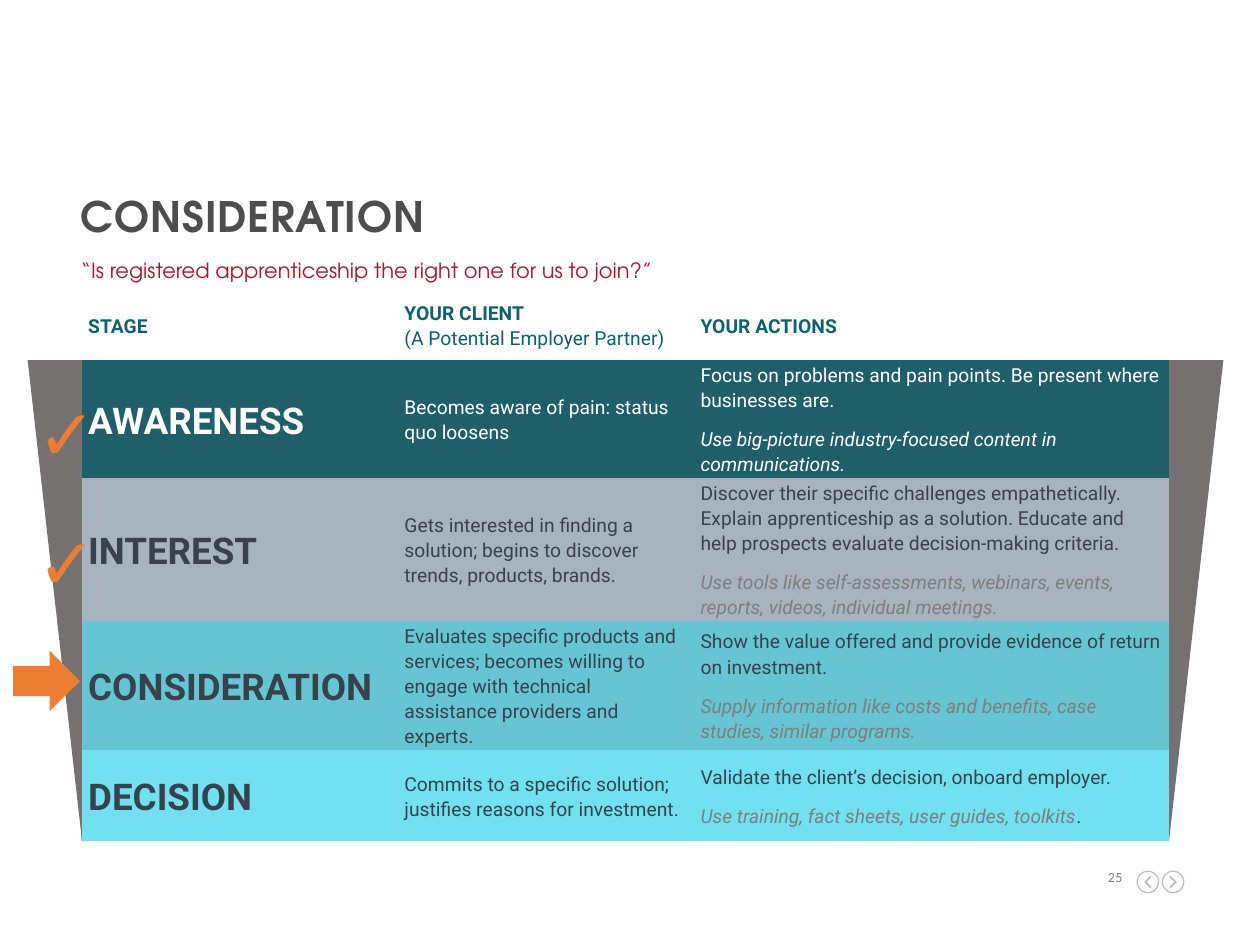
from pptx import Presentation
from pptx.dml.color import RGBColor
from pptx.enum.shapes import MSO_SHAPE
from pptx.enum.text import MSO_ANCHOR, PP_ALIGN
from pptx.oxml import parse_xml
from pptx.oxml.ns import nsdecls, qn
from pptx.util import Inches, Pt

TRIANGLE = MSO_SHAPE.RIGHT_TRIANGLE
ARROW = MSO_SHAPE.DOWN_ARROW
MIDDLE = MSO_ANCHOR.MIDDLE
RIGHT = PP_ALIGN.RIGHT
QUARTER = 5400000

COLORS = {
    "white": "FFFFFF", "title": "4D4D4D", "red": "AA182C", "header": "0B6370",
    "dark": "38424C", "hint": "7F7F7F", "number": "808080", "icon": "BFBFBF",
    "funnel": "767171", "orange": "ED7D31", "awareness": "1E5F69",
    "interest": "A7B3BE", "consideration": "65C5D3", "decision": "71E0F1",
}
TITLE = {"name": "TeX Gyre Adventor", "size": Pt(24), "bold": True}
SUBTITLE = {"name": "TeX Gyre Adventor", "size": Pt(12), "bold": False}
NUMBER = {"name": "Calibri", "size": Pt(8)}
CHECK = {"name": "Calibri", "size": Pt(40.5), "bold": True}
BODY = {"name": "Roboto", "size": Pt(11), "bold": False, "italic": False}
HEAD = {**BODY, "bold": True}
HINT = {**BODY, "italic": True}
STAGE = {**HEAD, "size": Pt(21)}

CELL = {"vertical_anchor": MIDDLE, "margin_left": Inches(0.06),
        "margin_right": Inches(0.06), "margin_top": 0, "margin_bottom": 0}
CELL_PARA = {"line_spacing": 1.12, "space_before": Pt(4), "space_after": Pt(4)}
NO_MARGINS = {"margin_left": 0, "margin_right": 0, "margin_top": 0, "margin_bottom": 0}

COLUMNS = [2.51, 2.35, 3.78]
HEADER_HEIGHT = 0.56
HEADERS = [("STAGE", ""), ("YOUR CLIENT", "(A Potential Employer Partner)"),
           ("YOUR ACTIONS", "")]
STAGES = [
    ("AWARENESS", 0.85, "white", "white",
     "Becomes aware of pain: status quo loosens",
     "Focus on problems and pain points. Be present where businesses are.",
     "Use big-picture industry-focused content in communications.", ""),
    ("INTEREST", 1.05, "dark", "hint",
     "Gets interested in finding a solution; begins to discover trends, products, brands.",
     "Discover their specific challenges empathetically. Explain apprenticeship as a "
     "solution. Educate and help prospects evaluate decision-making criteria.",
     "Use tools like self-assessments, webinars, events, reports, videos, "
     "individual meetings.", ""),
    ("CONSIDERATION", 0.85, "dark", "hint",
     "Evaluates specific products and services; becomes willing to engage with "
     "technical assistance providers and experts.",
     "Show the value offered and provide evidence of return on investment.",
     "Supply information like costs and benefits, case studies, similar programs.", ""),
    ("DECISION", 0.72, "dark", "hint",
     "Commits to a specific solution; justifies reasons for investment.",
     "Validate the client’s decision, onboard employer.",
     "Use training, fact sheets, user guides, toolkits", "."),
]


def rgb(name):
    """Return the named colour."""
    return RGBColor.from_string(COLORS[name])


def apply(obj, values):
    """Set each attribute of an object from a dict."""
    for key, value in values.items():
        setattr(obj, key, value)


def add_run(p, text, style, color, spacing=0):
    """Add a styled run to a paragraph."""
    r = p.add_run()
    r.text = text
    apply(r.font, style)
    r.font.color.rgb = rgb(color)
    if spacing:
        r.font._element.set("spc", str(spacing))


def paint(sp, color):
    """Give a shape a plain fill without line or shadow."""
    sp.shadow.inherit = False
    sp.fill.solid()
    sp.fill.fore_color.rgb = rgb(color)
    sp.line.fill.background()


def add_label(slide, box, text, style, color, frame=NO_MARGINS, para=None, spacing=0):
    """Place one line of text in a box."""
    tf = slide.shapes.add_textbox(*map(Inches, box)).text_frame
    apply(tf, {"word_wrap": True, **frame})
    p = tf.paragraphs[0]
    apply(p, para or {})
    add_run(p, text, style, color, spacing)


def fill_cell(cell, fill, paragraphs):
    """Fill a borderless table cell with paragraphs made of runs."""
    apply(cell, CELL)
    cell.fill.solid()
    cell.fill.fore_color.rgb = rgb(fill)
    for i, side in enumerate(("lnL", "lnR", "lnT", "lnB")):
        border = f'<a:{side} {nsdecls("a")} w="0"><a:noFill/></a:{side}>'
        cell._tc.tcPr.insert(i, parse_xml(border))
    tf = cell.text_frame
    for i, runs in enumerate(paragraphs):
        p = tf.add_paragraph() if i else tf.paragraphs[0]
        apply(p, CELL_PARA)
        if not i:
            p.space_before = Pt(0)
        for j, run in enumerate(runs):
            if j and fill == "white":
                p.add_line_break()
            add_run(p, *run)


def add_heading(slide, left, top, width):
    """Place the title and the question below it."""
    add_label(slide, (left, top, width, 0.56), "CONSIDERATION", TITLE, "title", spacing=50)
    add_label(slide, (left, top + 0.57, width, 0.21),
              "“Is registered apprenticeship the right one for us to join?”",
              SUBTITLE, "red", para={"line_spacing": Pt(12)})


def add_stage_table(slide, left, top):
    """Place the table of stages, client states and actions."""
    heights = [HEADER_HEIGHT] + [stage[1] for stage in STAGES]
    box = (left, top, sum(COLUMNS), sum(heights))
    table = slide.shapes.add_table(len(heights), len(COLUMNS), *map(Inches, box)).table
    apply(table, {"first_row": False, "horz_banding": False})
    for column, width in zip(table.columns, COLUMNS):
        column.width = Inches(width)
    for row, height in zip(table.rows, heights):
        row.height = Inches(height)
    for c, (head, note) in enumerate(HEADERS):
        runs = [(head, HEAD, "header")] + ([(note, BODY, "header")] if note else [])
        fill_cell(table.cell(0, c), "white", [runs])
    for i, (name, _, color, hint_color, client, action, hint, end) in enumerate(STAGES, 1):
        hints = [(hint, HINT, hint_color)] + ([(end, BODY, color)] if end else [])
        contents = [[[(name, STAGE, color)]], [[(client, BODY, color)]],
                    [[(action, BODY, color)], hints]]
        for c, paragraphs in enumerate(contents):
            fill_cell(table.cell(i, c), name.lower(), paragraphs)


def add_funnel(slide, left, top, width, height):
    """Place the two tapering sides of the funnel around a box."""
    side = 0.43
    for x, flips in ((left - side, ("flipH", "flipV")), (left + width, ("flipV",))):
        sp = slide.shapes.add_shape(TRIANGLE, *map(Inches, (x, top, side, height)))
        paint(sp, "funnel")
        for flip in flips:
            sp._element.spPr.xfrm.set(flip, "1")


def add_progress(slide, left, top):
    """Place the checks for finished stages and the arrow at the current one."""
    for i in range(2):
        add_label(slide, (left, top + 1.03 * i, 0.84, 0.78), "✓", CHECK, "orange", frame={})
    box = (left - 0.07, top + 2.1, 0.48, 0.53)
    sp = slide.shapes.add_shape(ARROW, *map(Inches, box))
    sp.rotation = 270
    paint(sp, "orange")


def add_nav_icon(slide, left, top, size, direction):
    """Place a ringed chevron that points left (-1) or right (1)."""
    radii = [size / 2, size / 2 - 0.01]
    chevron = [(-0.03, -0.04), (0.01, 0), (-0.03, 0.04),
               (-0.02, 0.05), (0.03, 0), (-0.02, -0.05)]
    contours = [[(r, 0), (0, r), (-r, 0), (0, -r), (r, 0)] for r in radii]
    contours.append([(direction * x, y) for x, y in chevron])
    cx, cy = left + size / 2, top + size / 2
    contours = [[(Inches(cx + x), Inches(cy + y)) for x, y in pts] for pts in contours]
    fb = slide.shapes.build_freeform(*contours[0][0])
    for i, points in enumerate(contours):
        if i:
            fb.move_to(*points[0])
        fb.add_line_segments(points[1:], close=True)
    sp = fb.convert_to_shape()
    paint(sp, "icon")
    for i, line in enumerate(list(sp._element.iter(qn("a:lnTo")))[:8]):
        r = Inches(radii[i // 4])
        arc = (f'<a:arcTo {nsdecls("a")} wR="{r}" hR="{r}" '
               f'stAng="{i % 4 * QUARTER}" swAng="{QUARTER}"/>')
        line.getparent().replace(line, parse_xml(arc))


def add_footer(slide, left, top):
    """Place the slide number and the navigation icons."""
    add_label(slide, (left, top, 0.23, 0.13), "25", NUMBER, "number",
              para={"alignment": RIGHT}, spacing=30)
    for x, direction in ((0.54, 1), (0.34, -1)):
        add_nav_icon(slide, left + x, top + 0.02, 0.18, direction)


def main():
    """Build the slide and save it."""
    prs = Presentation()
    apply(prs, {"slide_width": Inches(10), "slide_height": Inches(7.5)})
    slide = prs.slides.add_slide(prs.slide_layouts[6])
    add_footer(slide, 8.68, 6.89)
    add_heading(slide, 0.64, 1.51, 8.7)
    add_stage_table(slide, 0.64, 2.3)
    add_funnel(slide, 0.65, 2.86, 8.63, 3.8)
    add_progress(slide, 0.2, 3.04)
    prs.save("out.pptx")


if __name__ == "__main__":
    main()
